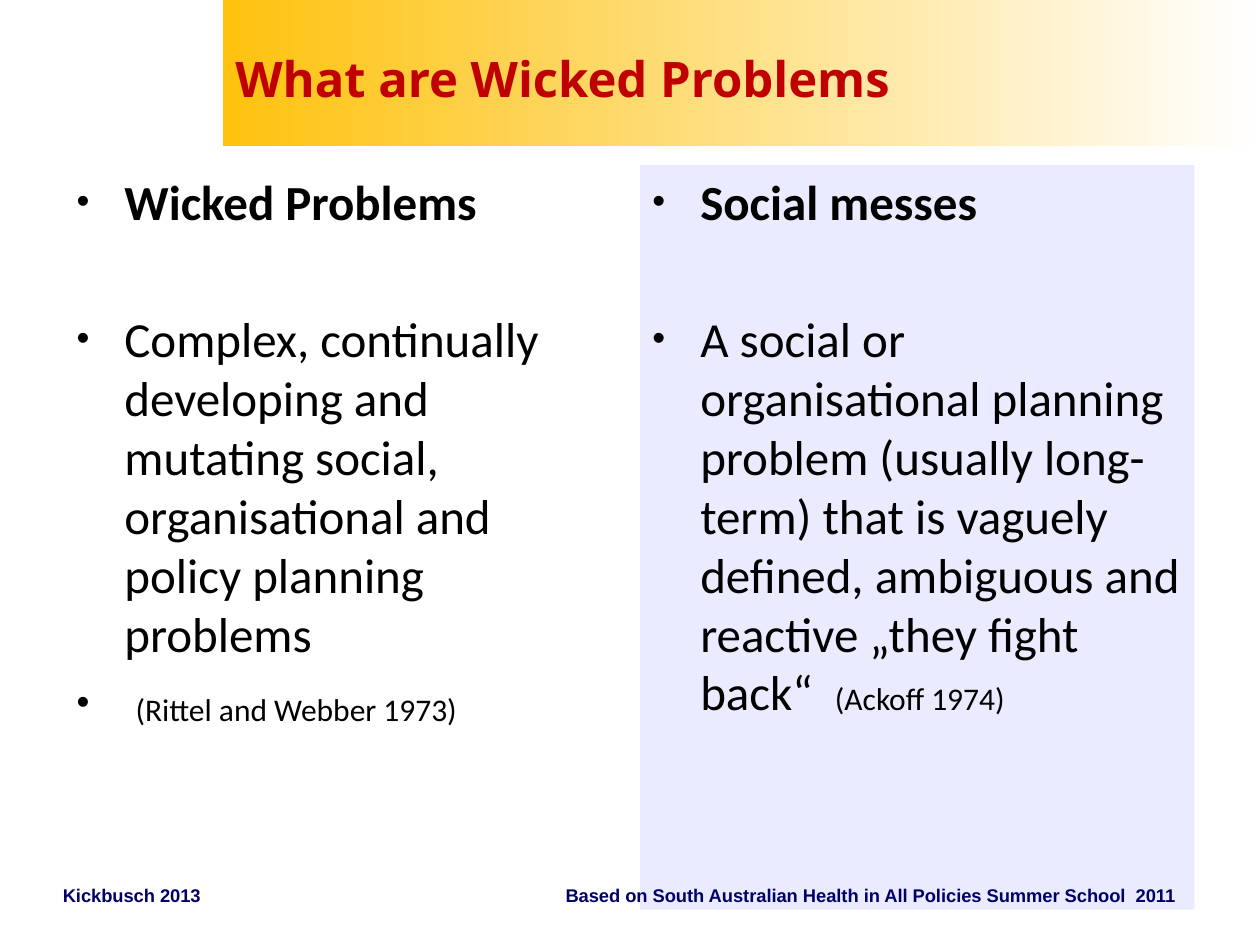
from lxml.etree import SubElement
from pptx import Presentation
from pptx.dml.color import RGBColor
from pptx.enum.shapes import MSO_SHAPE
from pptx.enum.text import MSO_ANCHOR
from pptx.oxml.ns import qn
from pptx.util import Inches, Pt

HUES = {"gold": "FEC20F", "white": "FFFFFF", "red": "C00000",
        "black": "000000", "navy": "000066", "lilac": "EBEBFF"}


def style(font, name, size, hue, bold):
    font.name, font.size, font.bold = name, Pt(size), bold
    font.color.rgb = RGBColor.from_string(HUES[hue])


def add_bullet(para):
    props = para._p.get_or_add_pPr()
    props.set("marL", str(Inches(0.38)))
    props.set("indent", str(-Inches(0.38)))
    SubElement(props, qn("a:buSzPct")).set("val", "75000")
    SubElement(props, qn("a:buFont")).set("typeface", "Arial")
    SubElement(props, qn("a:buChar")).set("char", "•")


deck = Presentation()
deck.slide_width, deck.slide_height = Inches(10), Inches(7.5)
slide = deck.slides.add_slide(deck.slide_layouts[6])
shapes = slide.shapes

# Title band
band = shapes.add_shape(MSO_SHAPE.RECTANGLE, Inches(1.77), 0, Inches(8.23), Inches(1.16))
band.shadow.inherit = False
band.line.fill.background()
band.fill.gradient()
band.fill.gradient_angle = 0
for stop, place, hue in zip(band.fill.gradient_stops, (0, 1), ("gold", "white")):
    stop.position = place
    stop.color.rgb = RGBColor.from_string(HUES[hue])

title = shapes.add_textbox(Inches(1.77), Inches(0.13), Inches(6.46), Inches(0.97))
frame = title.text_frame
frame.word_wrap = True
frame.vertical_anchor = MSO_ANCHOR.MIDDLE
frame.text = "What are Wicked Problems"
style(frame.paragraphs[0].font, "Open Sans", 28, "red", True)

# Two columns: each paragraph is (space before, bold, runs of text and size)
columns = [
    (0.51, "white", [
        (0, True, [("Wicked Problems", 28)]),
        (45, False, [("Complex, continually developing and mutating social, "
                      "organisational and policy planning problems", 28)]),
        (6, False, [(" ", 28), ("(Rittel and Webber 1973)", 18)]),
    ]),
    (5.08, "lilac", [
        (0, True, [("Social messes", 28)]),
        (45, False, [("A social or organisational planning problem (usually long-term) "
                      "that is vaguely defined, ambiguous and reactive "
                      "„they fight back“  ", 28), ("(Ackoff 1974)", 18)]),
    ]),
]
for left, hue, paras in columns:
    box = shapes.add_textbox(Inches(left), Inches(1.31), Inches(4.4), Inches(5.91))
    box.fill.solid()
    box.fill.fore_color.rgb = RGBColor.from_string(HUES[hue])
    frame = box.text_frame
    frame.word_wrap = True
    for spot, (gap, bold, runs) in enumerate(paras):
        para = frame.add_paragraph() if spot else frame.paragraphs[0]
        add_bullet(para)
        para.space_before = Pt(gap)
        style(para.font, "Calibri", 28, "black", bold)
        for text, size in runs:
            run = para.add_run()
            run.text = text
            run.font.size = Pt(size)

# Source lines
notes = [
    (0.4, 1.32, False, "Kickbusch 2013"),
    (4.39, 5.28, True, "Based on South Australian Health in All Policies Summer School  2011"),
]
for left, width, wrap, text in notes:
    box = shapes.add_textbox(Inches(left), Inches(6.97), Inches(width), Inches(0.28))
    frame = box.text_frame
    frame.word_wrap = wrap
    frame.text = text
    style(frame.paragraphs[0].font, "Arial", 10.5, "navy", True)

deck.save("out.pptx")
